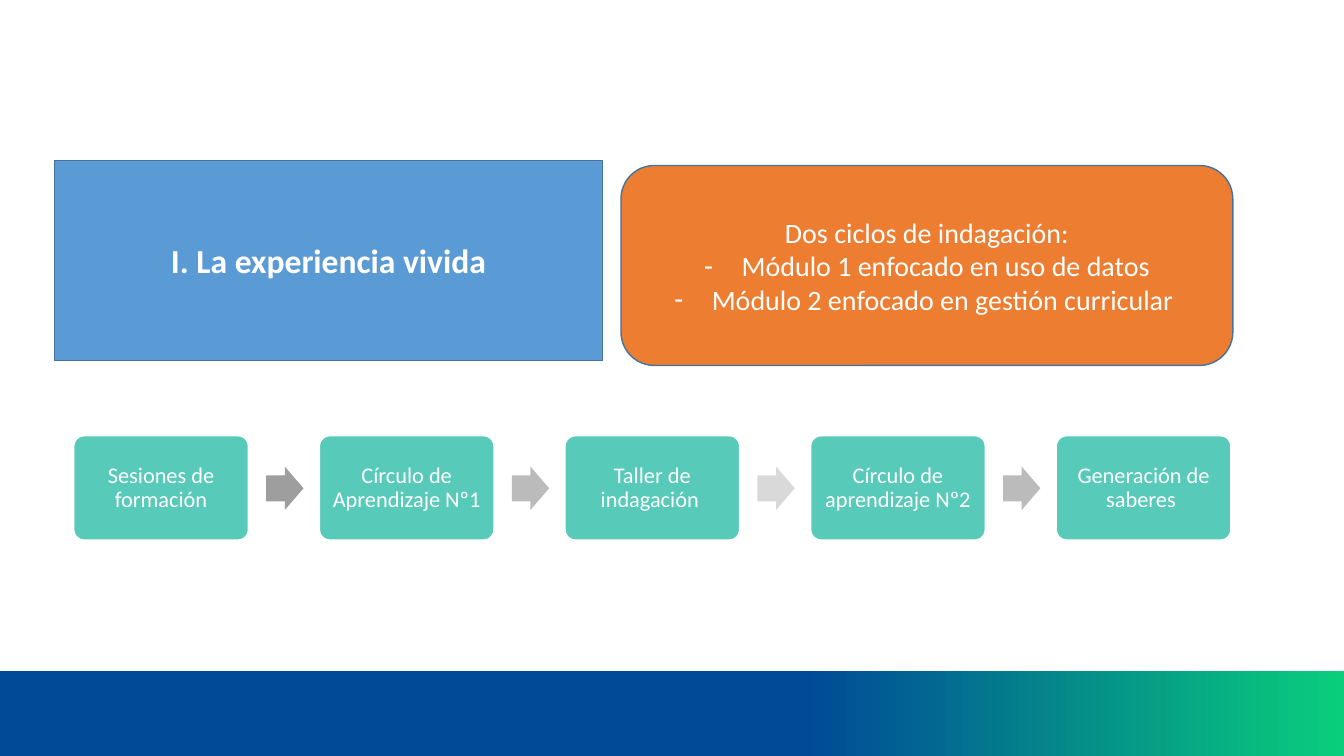
from typing import NamedTuple

from lxml.etree import SubElement
from pptx import Presentation
from pptx.dml.color import RGBColor
from pptx.enum.shapes import MSO_SHAPE
from pptx.enum.text import MSO_ANCHOR, MSO_AUTO_SIZE, PP_ALIGN
from pptx.oxml.ns import qn
from pptx.util import Cm, Pt


class Box(NamedTuple):
    left: float
    top: float
    width: float
    height: float


class Step(NamedTuple):
    text: str
    arrow: str = ""


TITLE = Box(1.37, 4.04, 13.82, 5.04)
CYCLES = Box(15.65, 4.17, 15.42, 5.04)
BAND = Box(0, 16.9, 33.87, 2.15)
CARD = Box(1.86, 10.98, 4.4, 2.63)
ARROW = Box(6.71, 11.76, 0.94, 1.09)
PITCH = 6.19
STEPS = [
    Step("Sesiones de formación", "9E9E9E"),
    Step("Círculo de Aprendizaje Nº1 ", "BBBBBB"),
    Step("Taller de indagación ", "D9D9D9"),
    Step("Círculo de aprendizaje Nº2 ", "BBBBBB"),
    Step("Generación de saberes "),
]


def color(code: str) -> RGBColor:
    return RGBColor.from_string(code)


def paint(shape, fill: str, line: str = "") -> None:
    shape.fill.solid()
    shape.fill.fore_color.rgb = color(fill)
    if line:
        shape.line.color.rgb = color(line)
        shape.line.width = Pt(1)
    else:
        shape.line.fill.background()


def place(shape, box: Box) -> None:
    shape.left, shape.top = Cm(box.left), Cm(box.top)
    shape.width, shape.height = Cm(box.width), Cm(box.height)


def draw(slide, kind: MSO_SHAPE, box: Box):
    shape = slide.shapes.add_shape(kind, *(Cm(side) for side in box))
    shape.shadow.inherit = False
    return shape


def panel(holder, box: Box, fill: str) -> None:
    place(holder, box)
    geom = SubElement(holder.element.spPr, qn("a:prstGeom"), prst="roundRect")
    SubElement(geom, qn("a:avLst"))
    paint(holder, fill, "43739E")


def bullet(para, mark: str) -> None:
    props = para._p.get_or_add_pPr()
    indent = Cm(0.95) if mark else 0
    props.set("marL", str(indent))
    props.set("indent", str(-indent))
    if mark:
        SubElement(props, qn("a:buFontTx"))
        SubElement(props, qn("a:buChar"), char=mark)
    else:
        SubElement(props, qn("a:buNone"))


def write(shape, *lines: str, size: int, bold: bool = False,
          space: float = 1.0, mark: str = "") -> None:
    frame = shape.text_frame
    frame.word_wrap = True
    frame.auto_size = MSO_AUTO_SIZE.NONE
    frame.vertical_anchor = MSO_ANCHOR.MIDDLE
    for i, line in enumerate(lines):
        para = frame.add_paragraph() if i else frame.paragraphs[0]
        para.text = line
        bullet(para, mark if i else "")
        para.alignment = PP_ALIGN.CENTER
        para.line_spacing = space
        para.space_before = Pt(0)
        para.font.name = "Calibri"
        para.font.size = Pt(size)
        para.font.bold = bold
        para.font.color.rgb = color("FFFFFF")


def band(slide) -> None:
    shape = draw(slide, MSO_SHAPE.RECTANGLE, BAND)
    shape.line.fill.background()
    shape.fill.gradient()
    shape.fill.gradient_angle = 0
    ends = [(0.6, "004A97"), (1.0, "09CE7C")]
    for stop, (spot, code) in zip(shape.fill.gradient_stops, ends):
        stop.position = spot
        stop.color.rgb = color(code)


def flow(slide) -> None:
    for i, step in enumerate(STEPS):
        shift = i * PITCH
        card = draw(slide, MSO_SHAPE.ROUNDED_RECTANGLE,
                    CARD._replace(left=CARD.left + shift))
        card.adjustments[0] = 0.1
        paint(card, "58CAB9", "FFFFFF")
        write(card, step.text, size=16, space=0.9)
        if step.arrow:
            arrow = draw(slide, MSO_SHAPE.RIGHT_ARROW,
                         ARROW._replace(left=ARROW.left + shift))
            arrow.adjustments[0] = 0.6
            arrow.adjustments[1] = 0.5
            paint(arrow, step.arrow)


def main() -> None:
    deck = Presentation()
    deck.slide_width, deck.slide_height = Cm(33.87), Cm(19.05)
    slide = deck.slides.add_slide(deck.slide_layouts[1])
    title, cycles = slide.placeholders
    panel(title, TITLE, "5B9BD5")
    write(title, "I. La experiencia vivida", size=24, bold=True)
    panel(cycles, CYCLES, "ED7D31")
    write(cycles, "Dos ciclos de indagación:",
          "Módulo 1 enfocado en uso de datos",
          "Módulo 2 enfocado en gestión curricular ", size=20, mark="-")
    band(slide)
    flow(slide)
    deck.save("out.pptx")


if __name__ == "__main__":
    main()
